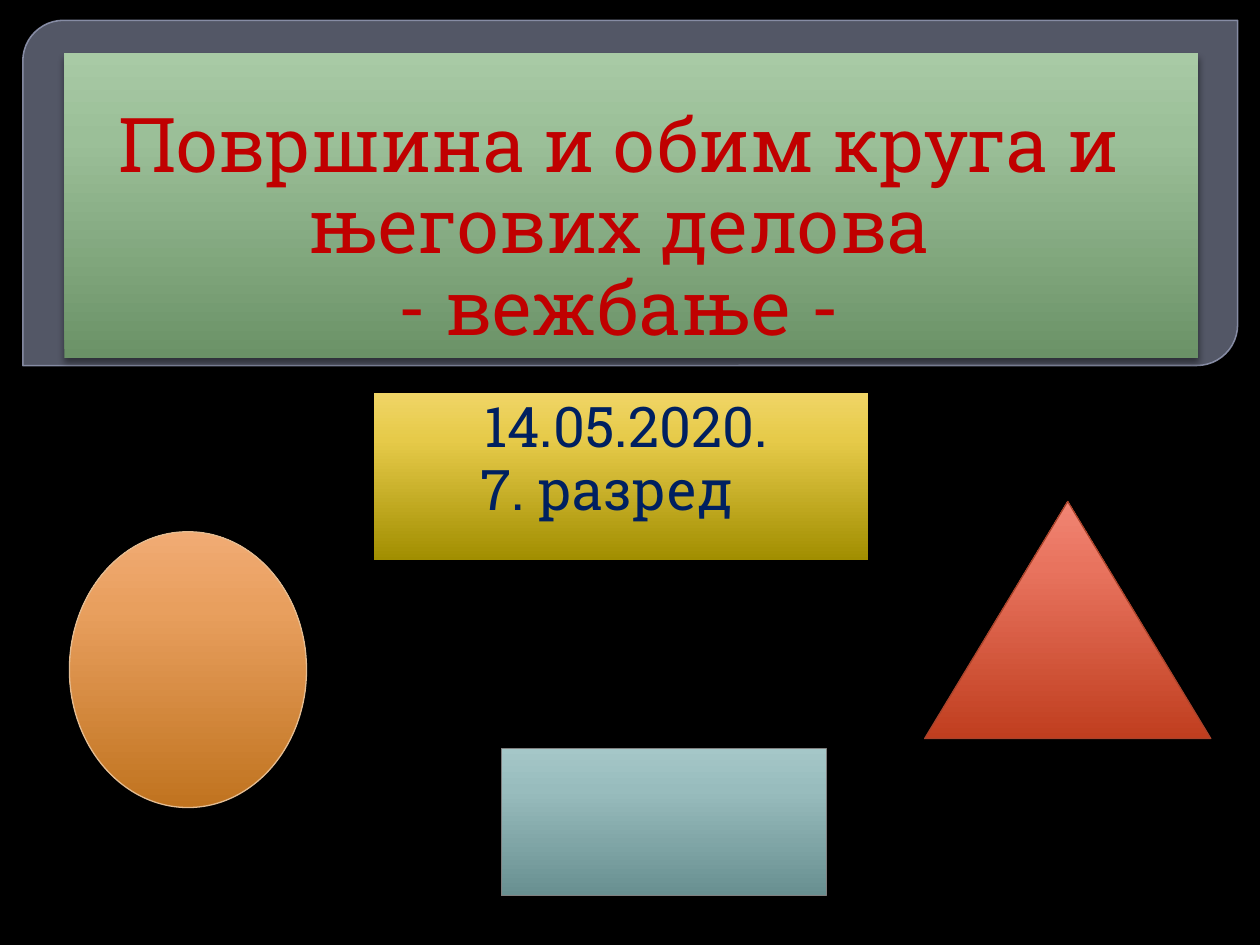
from dataclasses import dataclass

from pptx import Presentation
from pptx.dml.color import RGBColor
from pptx.enum.shapes import MSO_SHAPE
from pptx.enum.text import MSO_ANCHOR, PP_ALIGN
from pptx.oxml import parse_xml
from pptx.oxml.ns import nsdecls, qn
from pptx.util import Cm, Pt

RECT = MSO_SHAPE.RECTANGLE
PANEL = MSO_SHAPE.ROUND_2_DIAG_RECTANGLE
CIRCLE = MSO_SHAPE.FLOWCHART_CONNECTOR
PEAK = MSO_SHAPE.FLOWCHART_EXTRACT
BLOCK = MSO_SHAPE.FLOWCHART_PROCESS
TOP, BOTTOM = MSO_ANCHOR.TOP, MSO_ANCHOR.BOTTOM
CENTER = PP_ALIGN.CENTER


@dataclass(frozen=True)
class Theme:
    font: str = "Roboto Slab"
    back: str = "000000"
    panel: str = "80869E"
    edge: str = "9298B2"
    title: str = "C00000"
    date: str = "002060"
    title_size: float = 43.2
    date_size: float = 32
    # Gradients run from the bottom of a shape to its top.
    green: tuple = ("6B9267", "9BBF98", "A8CAA5")
    gold: tuple = ("A18E00", "E6CA49", "F0D566")
    orange: tuple = ("C0731F", "E89F5E", "F1AB74")
    red: tuple = ("C03E1F", "E8735E", "F18574")
    teal: tuple = ("688F90", "98BCBD", "A5C7C8")
    stops: tuple = (0, 72, 100)


THEME = Theme()


def rgb(code):
    return RGBColor.from_string(code)


def fade(paint, share):
    """Make a solid fill partly clear; share is the opaque percentage."""
    color = paint._xPr.find(qn("a:solidFill"))[0]
    color.append(parse_xml(f'<a:alpha {nsdecls("a")} val="{share * 1000}"/>'))


def add_shape(slide, kind, box, line=None, width=0.75):
    shape = slide.shapes.add_shape(kind, *map(Cm, box))
    shape.shadow.inherit = False
    if line:
        shape.line.color.rgb = rgb(line)
        shape.line.width = Pt(width)
    else:
        shape.line.fill.background()
    return shape


def add_panel(slide, box):
    shape = add_shape(slide, PANEL, box, THEME.edge, 0.87)
    shape.adjustments[0], shape.adjustments[1] = 0.118, 0
    shape.fill.solid()
    shape.fill.fore_color.rgb = rgb(THEME.panel)
    fade(shape.fill, 65)
    fade(shape.line.fill, 88)


def add_shaded(slide, kind, box, colors, line=None):
    """Add a shape with a vertical gradient and a soft shadow below it."""
    shape = add_shape(slide, kind, box, line)
    props = shape._element.spPr
    stops = "".join(
        f'<a:gs pos="{stop * 1000}"><a:srgbClr val="{color}"/></a:gs>'
        for stop, color in zip(THEME.stops, colors))
    shape.fill.background()
    props.replace(props.find(qn("a:noFill")), parse_xml(
        f'<a:gradFill {nsdecls("a")} rotWithShape="1"><a:gsLst>{stops}</a:gsLst>'
        '<a:lin ang="16200000" scaled="0"/></a:gradFill>'))
    props.find(qn("a:effectLst")).append(parse_xml(
        f'<a:outerShdw {nsdecls("a")} blurRad="{Pt(4)}" dist="{Pt(3)}" '
        'dir="5400000" rotWithShape="0"><a:srgbClr val="000000">'
        '<a:alpha val="43000"/></a:srgbClr></a:outerShdw>'))
    return shape


def add_text(shape, lines, size, color, anchor, right, before=0):
    """Fill a shape with (text, left indent in cm) paragraphs."""
    frame = shape.text_frame
    layout = {"word_wrap": True, "vertical_anchor": anchor,
              "margin_left": Cm(0.13), "margin_top": Cm(0.13),
              "margin_right": Cm(right), "margin_bottom": Cm(0.13)}
    for name, value in layout.items():
        setattr(frame, name, value)
    style = {"alignment": CENTER, "line_spacing": 0.9,
             "space_before": Pt(before)}
    face = {"name": THEME.font, "size": Pt(size)}
    for i, (text, indent) in enumerate(lines):
        para = frame.add_paragraph() if i else frame.paragraphs[0]
        para.text = text
        for name, value in style.items():
            setattr(para, name, value)
        if indent:
            para._p.get_or_add_pPr().set("marL", str(Cm(indent)))
        for run in para.runs:
            for name, value in face.items():
                setattr(run.font, name, value)
            run.font.color.rgb = rgb(color)


def main():
    deck = Presentation()
    deck.slide_width, deck.slide_height = Cm(25.4), Cm(19.05)
    slide = deck.slides.add_slide(deck.slide_layouts[6])
    slide.background.fill.solid()
    slide.background.fill.fore_color.rgb = rgb(THEME.back)

    add_panel(slide, (0.46, 0.41, 24.49, 6.96))
    title = add_shaded(slide, RECT, (1.3, 1.07, 22.86, 6.15), THEME.green)
    add_text(title, [("Површина и обим круга и његових делова\v- вежбање -", 0)],
             THEME.title_size, THEME.title, BOTTOM, 0.64)
    date = add_shaded(slide, RECT, (7.54, 7.92, 9.96, 3.38), THEME.gold)
    add_text(date, [("14.05.2020.", 0.77), ("7. разред", 0)],
             THEME.date_size, THEME.date, TOP, 0.69, 1.5)

    figures = (
        (CIRCLE, (1.4, 10.72, 4.78, 5.56), THEME.orange, "E3BC92"),
        (PEAK, (18.64, 10.11, 5.77, 4.78), THEME.red, "A9432B"),
        (BLOCK, (10.11, 15.09, 6.55, 2.97), THEME.teal, "808080"),
    )
    for figure in figures:
        add_shaded(slide, *figure)
    deck.save("out.pptx")


if __name__ == "__main__":
    main()
